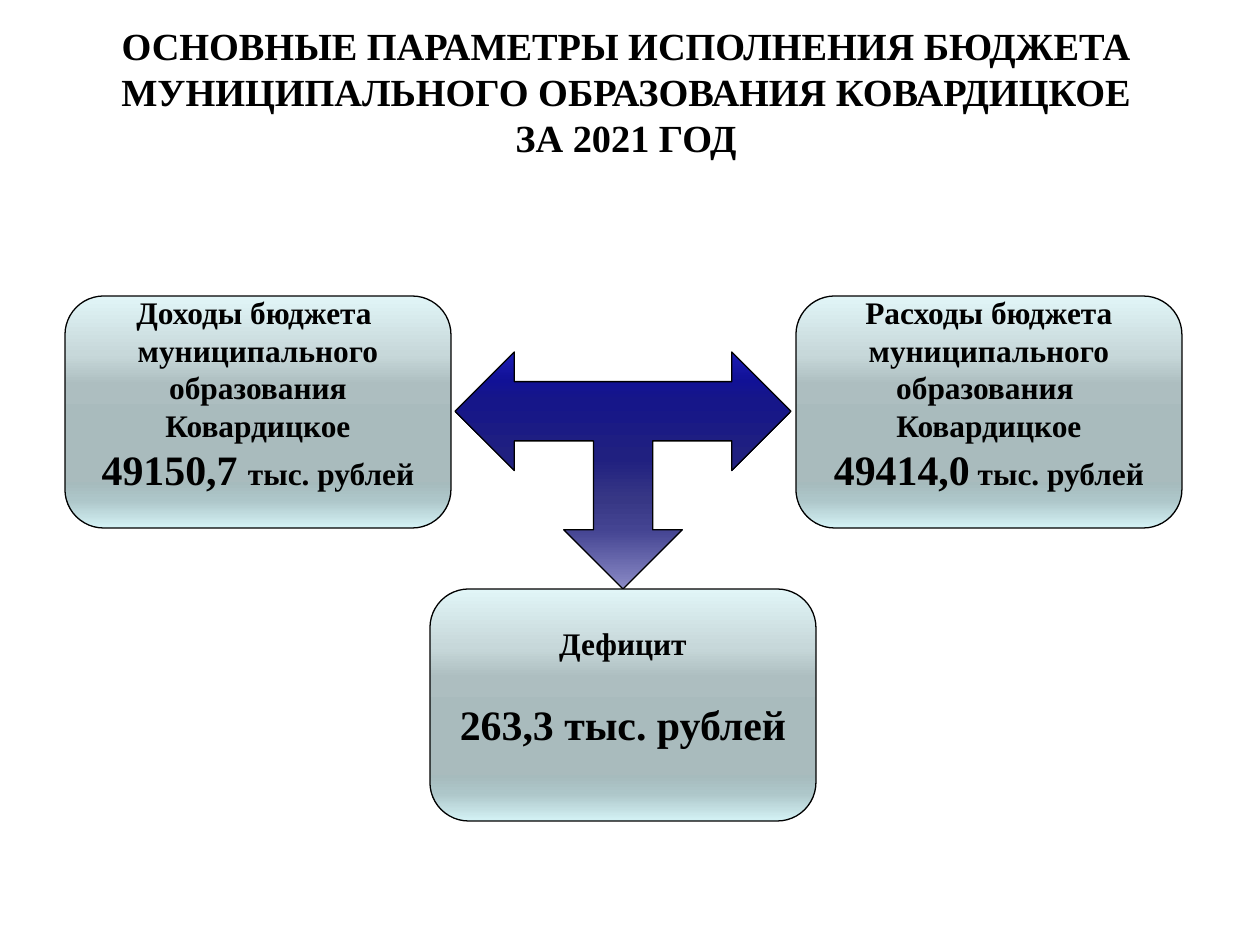
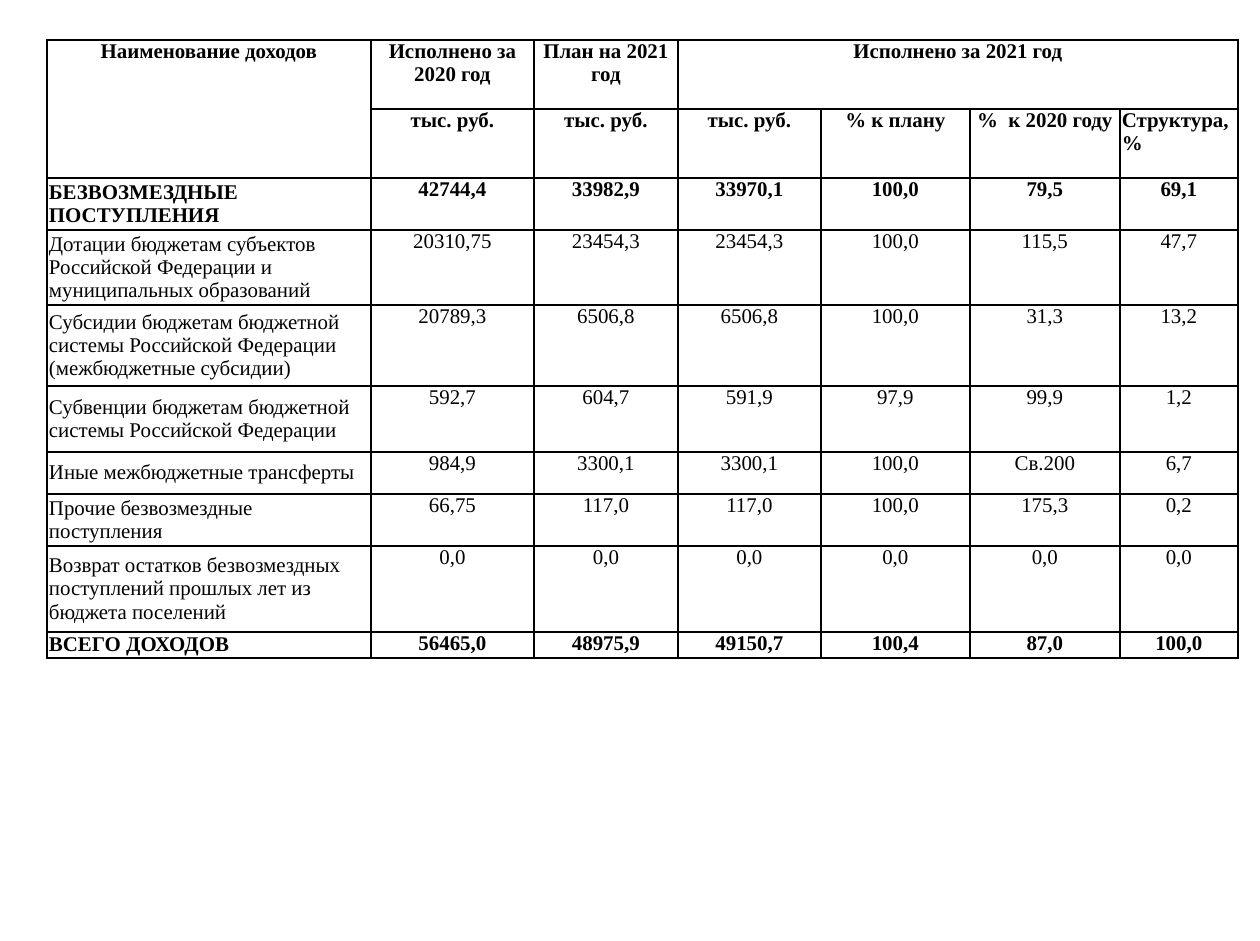
from pptx import Presentation
from pptx.dml import color
from pptx.enum import shapes, text
from pptx.oxml import ns, xmlchemy
from pptx import util as u

PX = 914400 / 125.5
FONT = "Times New Roman"
BLACK = color.RGBColor(0, 0, 0)
STOPS = (0, 25, 38, 55, 80, 88, 100)
PALE = [color.RGBColor.from_string(c) for c in
        ("E1F5F7", "C7D8DA", "ADBEC0", "A9BBBD", "A6BBBD", "ADC6C9", "D4F2F5")]
NAVY = [color.RGBColor.from_string(c) for c in
        ("8B8BC6", "444492", "373785", "202080", "161689", "111196", "1C1CB5")]

TITLE = ("ОСНОВНЫЕ ПАРАМЕТРЫ ИСПОЛНЕНИЯ БЮДЖЕТА МУНИЦИПАЛЬНОГО ОБРАЗОВАНИЯ КОВАРДИЦКОЕ",
         "ЗА 2021 ГОД")
COLS = (324, 163, 144, 143, 149, 150, 118)
ROWS = (69, 69, 52, 75, 81, 66, 42, 52, 86, 26)
HEADS = 2
BOLD = (0, 1, 2, 9)
DATA = (
    ("Наименование доходов", "Исполнено за 2020 год", "План на 2021 год",
     "Исполнено за 2021 год", "", "", ""),
    ("", "тыс. руб.", "тыс. руб.", "тыс. руб.", "% к плану", "%  к 2020 году",
     "Структура, %"),
    ("БЕЗВОЗМЕЗДНЫЕ ПОСТУПЛЕНИЯ", "42744,4", "33982,9", "33970,1", "100,0", "79,5", "69,1"),
    ("Дотации бюджетам субъектов Российской Федерации и муниципальных образований",
     "20310,75", "23454,3", "23454,3", "100,0", "115,5", "47,7"),
    ("Субсидии бюджетам бюджетной системы Российской Федерации (межбюджетные субсидии)",
     "20789,3", "6506,8", "6506,8", "100,0", "31,3", "13,2"),
    ("Субвенции бюджетам бюджетной системы Российской Федерации",
     "592,7", "604,7", "591,9", "97,9", "99,9", "1,2"),
    ("Иные межбюджетные трансферты", "984,9", "3300,1", "3300,1", "100,0", "Св.200", "6,7"),
    ("Прочие безвозмездные поступления", "66,75", "117,0", "117,0", "100,0", "175,3", "0,2"),
    ("Возврат остатков безвозмездных поступлений прошлых лет из бюджета поселений",
     "0,0", "0,0", "0,0", "0,0", "0,0", "0,0"),
    ("ВСЕГО ДОХОДОВ", "56465,0", "48975,9", "49150,7", "100,4", "87,0", "100,0"),
)


def px(n):
    return u.Emu(round(n * PX))


def write(para, runs, bold=True, align=text.PP_ALIGN.CENTER):
    para.alignment = align
    for words, size in runs:
        run = para.add_run()
        run.text = words
        font = run.font
        font.name, font.size, font.bold = FONT, u.Pt(size), bold
        font.color.rgb = BLACK


def fill_text(frame, lines):
    for i, runs in enumerate(lines):
        write(frame.add_paragraph() if i else frame.paragraphs[0], runs)


def child(node, tag, **attrs):
    item = xmlchemy.OxmlElement(tag)
    for key, val in attrs.items():
        item.set(key, str(val))
    node.append(item)
    return item


def draw(slide, kind, box, hues):
    shape = slide.shapes.add_shape(kind, *map(px, box))
    shape.shadow.inherit = False
    shape.fill.gradient()
    shape.fill.gradient_angle = 270
    stops = shape.element.spPr.find(ns.qn("a:gradFill")).find(ns.qn("a:gsLst"))
    for old in list(stops):
        stops.remove(old)
    for pos, hue in zip(STOPS, hues):
        child(child(stops, "a:gs", pos=pos * 1000), "a:srgbClr", val=hue)
    shape.line.color.rgb = BLACK
    shape.line.width = u.Pt(0.75)
    return shape


def card(slide, box, lines, gap=0):
    shape = draw(slide, shapes.MSO_SHAPE.ROUNDED_RECTANGLE, box, PALE)
    frame = shape.text_frame
    frame.word_wrap = False
    frame.vertical_anchor = text.MSO_ANCHOR.MIDDLE
    frame.margin_top, frame.margin_bottom = 0, px(37)
    fill_text(frame, lines)
    frame.paragraphs[-1].space_before = u.Pt(gap)


def heading(slide, box):
    title = slide.shapes.title
    title.left, title.top, title.width, title.height = map(px, box)
    frame = title.text_frame
    frame.auto_size = text.MSO_AUTO_SIZE.NONE
    frame.vertical_anchor = text.MSO_ANCHOR.TOP
    fill_text(frame, [[(line, 22)] for line in TITLE])


def scheme(slide, box):
    left, top, width, height = box
    wide, high = 386, 232
    mid = left + (width - wide) // 2
    heads = (
        (left, ("Доходы бюджета ", "муниципального", " образования ", "Ковардицкое"),
         (("49150,7 ", 24), ("тыс. рублей", 18))),
        (left + width - wide, ("Расходы бюджета", "муниципального", "образования ", "Ковардицкое"),
         (("49414,0", 24), (" тыс. рублей", 18))),
    )
    for x, names, total in heads:
        card(slide, (x, top, wide, high), [[(name, 18)] for name in names] + [total])
    arrow = draw(slide, shapes.MSO_SHAPE.LEFT_RIGHT_UP_ARROW,
                 (mid + 25, top + 56, 336, 237), NAVY)
    arrow.rotation = 180
    card(slide, (mid, top + height - high, wide, high),
         ([("Дефицит", 18)], [("263,3 тыс. рублей", 24)]), 21)


def edge(cell):
    cell.fill.background()
    props = cell._tc.get_or_add_tcPr()
    for i, side in enumerate("LRTB"):
        line = xmlchemy.OxmlElement("a:ln" + side)
        line.set("w", str(u.Pt(1)))
        child(child(line, "a:solidFill"), "a:srgbClr", val=BLACK)
        props.insert(i, line)


def grid(slide, left, top):
    table = slide.shapes.add_table(len(ROWS), len(COLS), px(left), px(top),
                                   px(sum(COLS)), px(sum(ROWS))).table
    table.first_row = table.horz_banding = False
    for col, size in zip(table.columns, COLS):
        col.width = px(size)
    for row, size in zip(table.rows, ROWS):
        row.height = px(size)
    table.cell(0, 0).merge(table.cell(1, 0))
    table.cell(0, 3).merge(table.cell(0, 6))
    for r, line in enumerate(DATA):
        for c, words in enumerate(line):
            cell = table.cell(r, c)
            cell.margin_left = cell.margin_right = px(2)
            cell.margin_top = cell.margin_bottom = 0
            label = c == 0 and r >= HEADS
            cell.vertical_anchor = text.MSO_ANCHOR.MIDDLE if label else text.MSO_ANCHOR.TOP
            flush = label or (r, c) == (1, 6)
            if words:
                write(cell.text_frame.paragraphs[0], [(words, 12)], r in BOLD,
                      text.PP_ALIGN.LEFT if flush else text.PP_ALIGN.CENTER)
            else:
                cell.text_frame.paragraphs[0].font.size = u.Pt(12)
            edge(cell)


def main():
    deck = Presentation()
    deck.slide_width, deck.slide_height = px(1260), px(941)
    first = deck.slides.add_slide(deck.slide_layouts[5])
    heading(first, (-4, 16, 1260, 152))
    scheme(first, (65, 296, 1117, 525))
    grid(deck.slides.add_slide(deck.slide_layouts[6]), 47, 40)
    deck.save("out.pptx")


if __name__ == "__main__":
    main()
